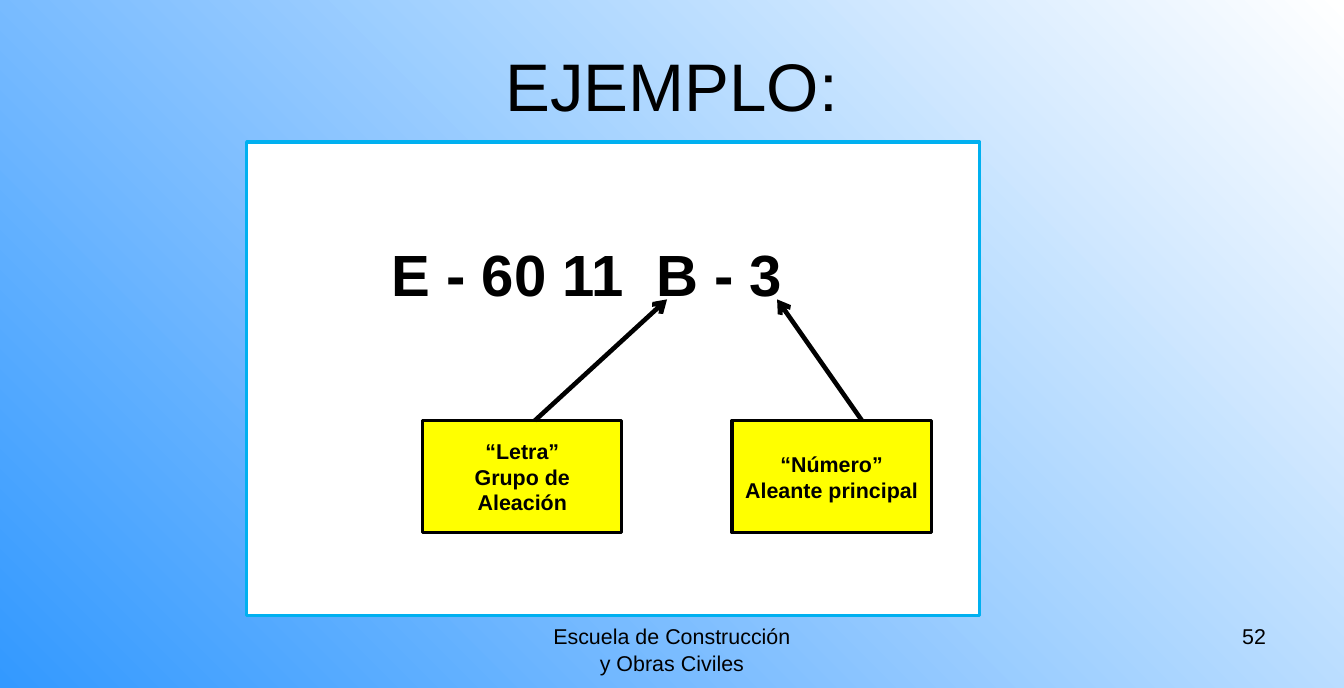
from pptx import Presentation
from pptx.dml.color import RGBColor
from pptx.enum.shapes import MSO_CONNECTOR, MSO_SHAPE
from pptx.enum.text import MSO_ANCHOR, PP_ALIGN
from pptx.oxml.ns import qn
from pptx.util import Emu, Pt
from lxml import etree

STRAIGHT = MSO_CONNECTOR.STRAIGHT
RECTANGLE = MSO_SHAPE.RECTANGLE
TOP, MIDDLE = MSO_ANCHOR.TOP, MSO_ANCHOR.MIDDLE
LEFT, CENTER, RIGHT = PP_ALIGN.LEFT, PP_ALIGN.CENTER, PP_ALIGN.RIGHT

BLACK = RGBColor(0x00, 0x00, 0x00)
WHITE = RGBColor(0xFF, 0xFF, 0xFF)
YELLOW = RGBColor(0xFF, 0xFF, 0x00)
SKY = RGBColor(0x00, 0xB0, 0xF0)
BLUE = RGBColor(0x33, 0x99, 0xFF)


class SlideBuilder:
    """Hold the style and the current slide, and add elements in px."""

    FONT = "Arial"
    EMU_PER_PX = 9144

    def __init__(self, deck, width, height):
        deck.slide_width, deck.slide_height = self.px(width, height)
        self.page = deck.slides.add_slide(deck.slide_layouts[6])

    def px(self, *lengths):
        return [Emu(length * self.EMU_PER_PX) for length in lengths]

    def background(self, start, end, angle):
        fill = self.page.background.fill
        fill.gradient()
        fill.gradient_angle = angle
        for stop, color in zip(fill.gradient_stops, (start, end)):
            stop.color.rgb = color

    def set_text(self, shape, text, size, align, anchor, bold):
        frame = shape.text_frame
        frame.word_wrap = True
        frame.vertical_anchor = anchor
        frame.text = text
        for para in frame.paragraphs:
            para.alignment = align
            for span in para.runs:
                span.font.name = self.FONT
                span.font.size = Pt(size)
                span.font.bold = bold
                span.font.color.rgb = BLACK

    def text(self, bounds, text, size, align=LEFT, anchor=TOP, bold=False):
        box = self.page.shapes.add_textbox(*self.px(*bounds))
        self.set_text(box, text, size, align, anchor, bold)
        return box

    def footer(self, bounds, text, align):
        first, *others = self.text(bounds, text, 14, align).text_frame.paragraphs
        first.line_spacing = Pt(11.3)
        for para in others:
            para.space_before = Pt(0.9)

    def box(self, bounds, fill, line, text=""):
        box = self.page.shapes.add_shape(RECTANGLE, *self.px(*bounds))
        box.shadow.inherit = False
        box.fill.solid()
        box.fill.fore_color.rgb = fill
        box.line.color.rgb = line
        box.line.width = Pt(2)
        if text:
            self.set_text(box, text, 14, CENTER, MIDDLE, True)

    def arrow(self, start, end):
        arrow = self.page.shapes.add_connector(STRAIGHT, *self.px(*start, *end))
        arrow.line.color.rgb = BLACK
        arrow.line.width = Pt(3)
        properties = arrow._element.spPr
        line = properties.find(qn("a:ln"))
        etree.SubElement(line, qn("a:tailEnd"), type="arrow")
        etree.SubElement(properties, qn("a:effectLst"))


def main():
    deck = Presentation()
    slide = SlideBuilder(deck, 1221, 625)
    slide.background(BLUE, WHITE, 45)
    slide.text((61, 25, 1099, 104), "EJEMPLO:", 44, CENTER, MIDDLE)
    slide.footer((417, 569, 387, 43), "Escuela de Construcción\ny Obras Civiles", CENTER)
    slide.footer((875, 569, 285, 43), "52", RIGHT)
    slide.box((224, 129, 666, 430), WHITE, SKY)
    slide.text((346, 212, 382, 74), "E - 60 11  B - 3", 38, bold=True)

    labels = (
        (384, "“Letra”\nGrupo de Aleación", 486, 606),
        (665, "“Número” Aleante principal", 783, 706),
    )
    for left, label, start, end in labels:
        slide.box((left, 382, 181, 102), YELLOW, BLACK, label)
        slide.arrow((start, 382), (end, 272))
    deck.save("out.pptx")


if __name__ == "__main__":
    main()
